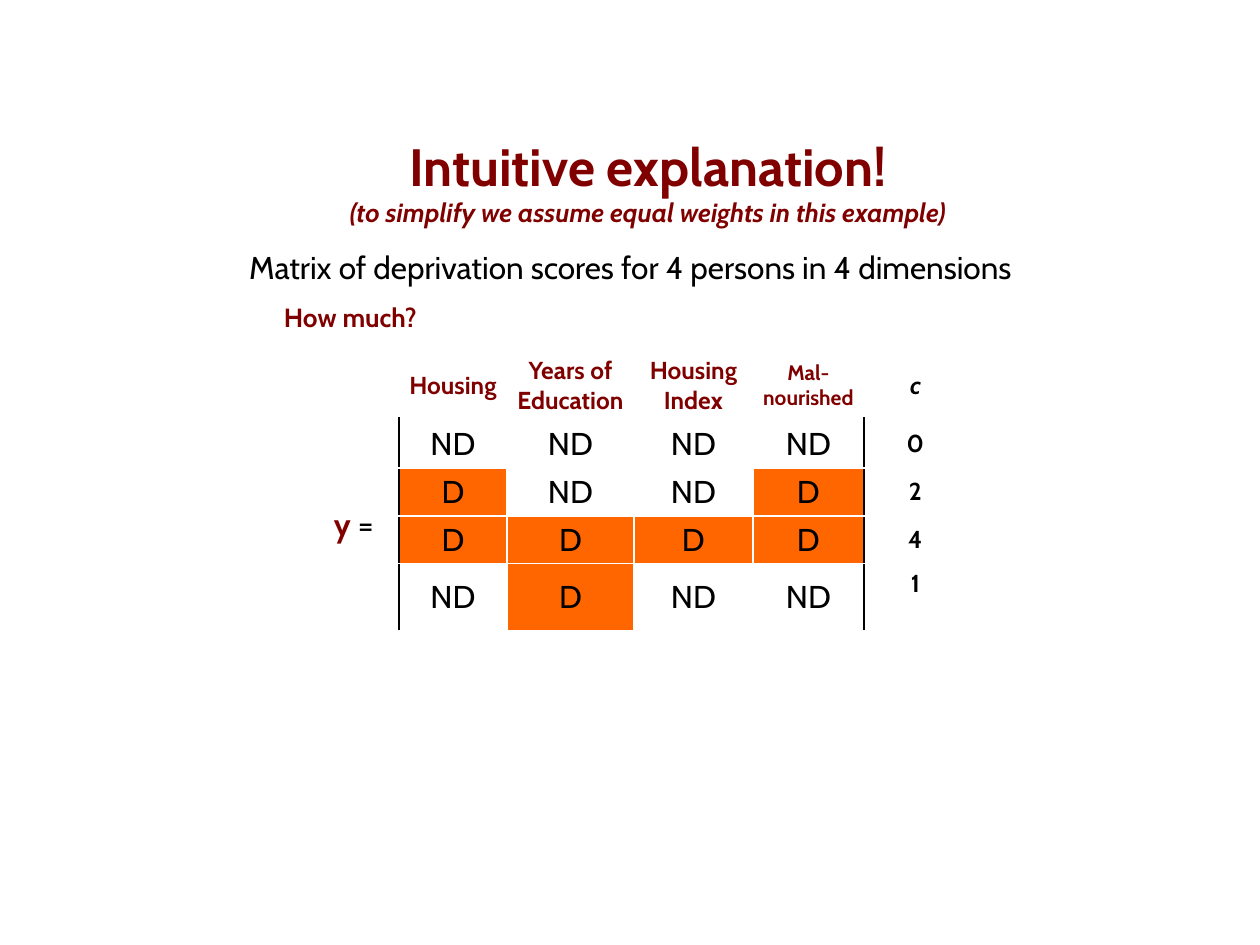
from lxml.etree import SubElement
from pptx import Presentation
from pptx.dml.color import RGBColor
from pptx.enum.text import MSO_ANCHOR as Anchor, PP_ALIGN as Align
from pptx.oxml.ns import qn
from pptx.util import Pt

PX = 914400 / 126
MAROON = RGBColor(0x80, 0x00, 0x00)
ORANGE = RGBColor(0xFF, 0x66, 0x00)
BLACK = RGBColor(0x00, 0x00, 0x00)
WHITE = RGBColor(0xFF, 0xFF, 0xFF)

COLUMN_WIDTHS = [74, 108, 127, 119, 111, 103]
ROW_HEIGHTS = [68, 48, 48, 48, 67, 48]
HEADINGS = ["Housing", "Years of Education", "Housing Index", "Mal-nourished"]
SCORES = [
    ["ND", "ND", "ND", "ND"],
    ["D", "ND", "ND", "D"],
    ["D", "D", "D", "D"],
    ["ND", "D", "ND", "ND"],
]
FIRST_ROW, LAST_ROW = 1, len(SCORES)
COUNT_COLUMN = len(COLUMN_WIDTHS) - 1


def emu(px):
    return round(px * PX)


class SlideBuilder:
    font_name = "Cabin"

    def __init__(self, slide):
        self.slide = slide

    def style(self, font, size, color=BLACK, bold=False, italic=False):
        font.name = self.font_name
        font.size = Pt(size)
        font.color.rgb = color
        font.bold = bold
        font.italic = italic

    def text(self, left, top, width, height, lines, align=Align.LEFT,
             anchor=Anchor.TOP, spacing=1.0, inset=(13, 6)):
        """Each line is a pair of its words and its font settings."""
        box = self.slide.shapes.add_textbox(*map(emu, (left, top, width, height)))
        frame = box.text_frame
        frame.word_wrap = True
        frame.vertical_anchor = anchor
        frame.margin_left = frame.margin_right = emu(inset[0])
        frame.margin_top = frame.margin_bottom = emu(inset[1])
        for index, (words, font) in enumerate(lines):
            paragraph = frame.add_paragraph() if index else frame.paragraphs[0]
            paragraph.text = words
            paragraph.alignment = align
            paragraph.line_spacing = spacing
            self.style(paragraph.font, **font)

    def table(self, left, top, widths, heights):
        frame = self.slide.shapes.add_table(
            len(heights), len(widths),
            *map(emu, (left, top, sum(widths), sum(heights))))
        table = frame.table
        table.first_row = table.horz_banding = False
        for column, width in zip(table.columns, widths):
            column.width = emu(width)
        for row, height in zip(table.rows, heights):
            row.height = emu(height)
        for cell in table.iter_cells():
            cell.margin_left = cell.margin_right = emu(9)
            cell.margin_top = cell.margin_bottom = emu(5)
            cell.vertical_anchor = Anchor.MIDDLE
        return table

    def cell(self, cell, words, size, **font):
        paragraph = cell.text_frame.paragraphs[0]
        paragraph.text = words
        paragraph.alignment = Align.CENTER
        self.style(paragraph.font, size, **font)

    def borders(self, cell, **edges):
        """Each edge (L, R, T, B) is a pair of colour and width in points."""
        properties = cell._tc.get_or_add_tcPr()
        for side in "LRTB":
            color, width = edges.get(side, (WHITE, 1))
            line = SubElement(properties, qn(f"a:ln{side}"), w=str(Pt(width)))
            fill = SubElement(line, qn("a:solidFill"))
            SubElement(fill, qn("a:srgbClr"), val=str(color))


def main():
    presentation = Presentation()
    presentation.slide_width = emu(1260)
    presentation.slide_height = emu(945)
    slide = presentation.slides.add_slide(presentation.slide_layouts[6])
    builder = SlideBuilder(slide)

    # Title
    builder.text(228, 122, 840, 118, [
        ("Intuitive explanation!", dict(size=30, color=MAROON, bold=True)),
        ("(to simplify we assume equal weights in this example)",
         dict(size=15, color=MAROON, bold=True, italic=True)),
    ], align=Align.CENTER, anchor=Anchor.MIDDLE)

    # Deprivation matrix: borders first, as they precede the fill in a cell
    table = builder.table(325, 351, COLUMN_WIDTHS, ROW_HEIGHTS)
    for row in range(len(ROW_HEIGHTS)):
        for column in range(len(COLUMN_WIDTHS)):
            edges = {}
            if row == 0:
                edges["B"] = (WHITE, 3)
            elif row <= LAST_ROW:
                if column in (0, COUNT_COLUMN - 1):
                    edges["R"] = (BLACK, 1)
                if column in (1, COUNT_COLUMN):
                    edges["L"] = (BLACK, 1)
            cell = table.cell(row, column)
            builder.borders(cell, **edges)
            cell.fill.background()

    # Headings
    for column, heading in enumerate(HEADINGS, start=1):
        size = 12 if heading == "Mal-nourished" else 14
        builder.cell(table.cell(0, column), heading, size, color=MAROON, bold=True)
    builder.cell(table.cell(0, COUNT_COLUMN), "c", 14, bold=True, italic=True)

    # Scores, with the number of deprivations of each person
    for row, scores in enumerate(SCORES, start=FIRST_ROW):
        for column, score in enumerate(scores, start=1):
            cell = table.cell(row, column)
            builder.cell(cell, score, 18)
            if score == "D":
                cell.fill.solid()
                cell.fill.fore_color.rgb = ORANGE
        count = str(scores.count("D"))
        builder.cell(table.cell(row, COUNT_COLUMN), count, 14, bold=True)
    table.cell(LAST_ROW, COUNT_COLUMN).vertical_anchor = Anchor.TOP

    # Matrix name
    name_cell = table.cell(FIRST_ROW, 0)
    name_cell.merge(table.cell(LAST_ROW, 0))
    paragraph = name_cell.text_frame.paragraphs[0]
    for words, color, bold in [("y", MAROON, True), (" =", BLACK, False)]:
        run = paragraph.add_run()
        run.text = words
        builder.style(run.font, 18, color, bold)

    # Question and subtitle
    builder.text(271, 299, 716, 42,
                 [("How much?", dict(size=15, color=MAROON, bold=True))],
                 spacing=0.9)
    builder.text(221, 247, 819, 398,
                 [("Matrix of deprivation scores for 4 persons in 4 dimensions",
                   dict(size=18))],
                 align=Align.CENTER, spacing=0.9, inset=(9, 5))

    presentation.save("out.pptx")


if __name__ == "__main__":
    main()
